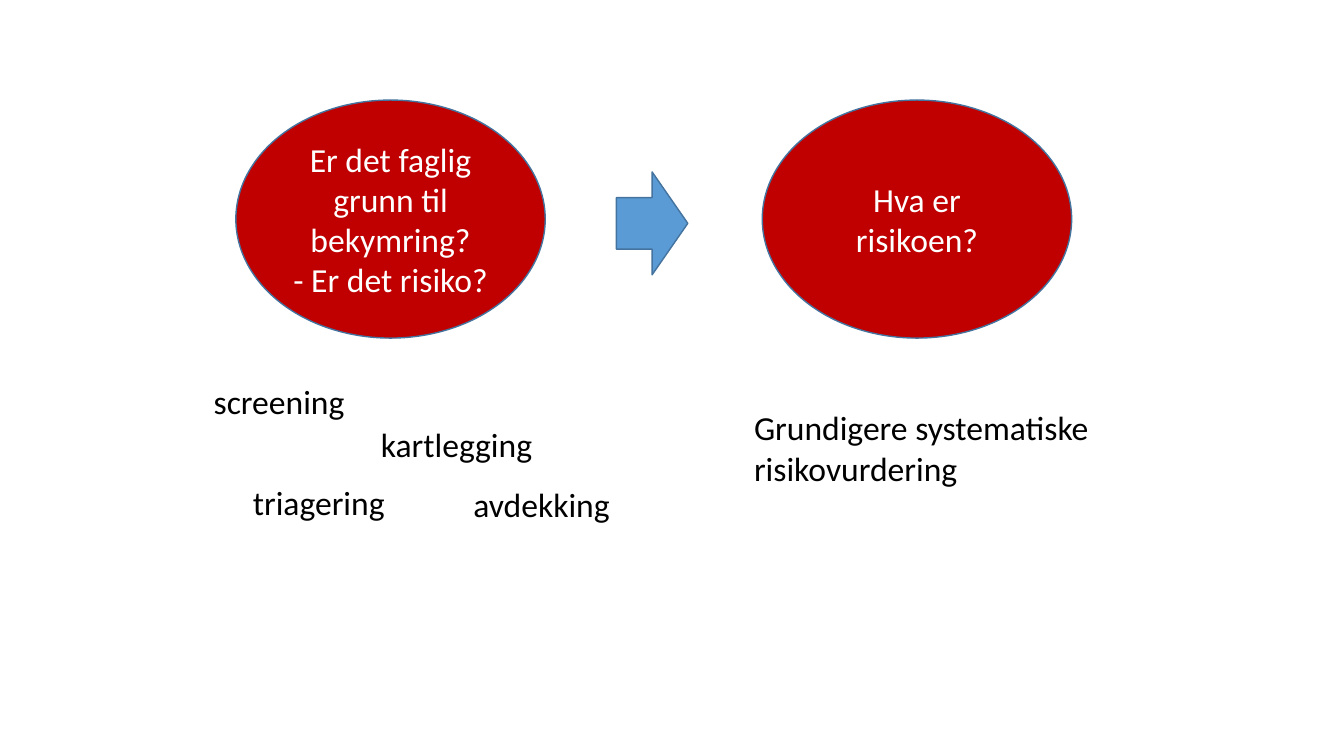
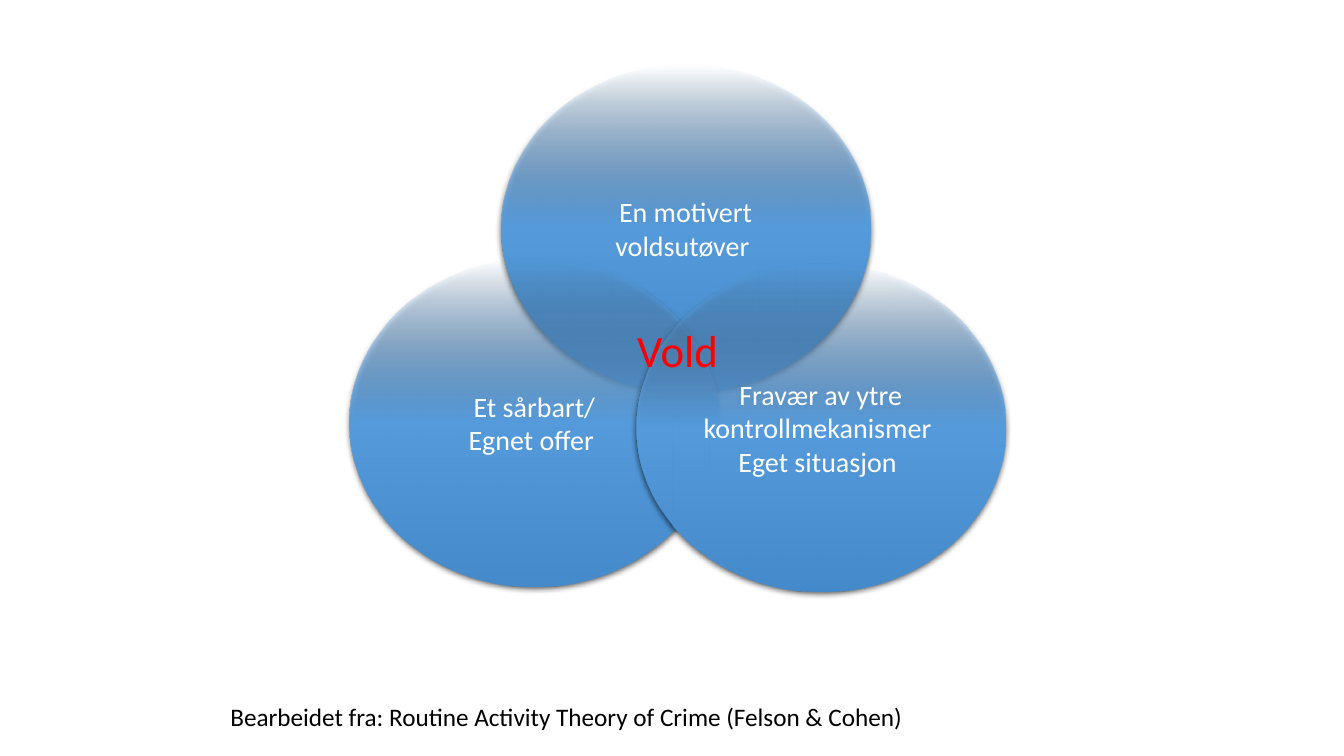
from pptx import Presentation
from pptx.dml.color import RGBColor
from pptx.enum.shapes import MSO_SHAPE
from pptx.enum.text import MSO_ANCHOR, MSO_AUTO_SIZE, PP_ALIGN
from pptx.oxml import parse_xml
from pptx.oxml.ns import nsdecls, qn
from pptx.util import Pt

ELLIPSE, ARROW = MSO_SHAPE.OVAL, MSO_SHAPE.RIGHT_ARROW
CENTER, LEFT = PP_ALIGN.CENTER, PP_ALIGN.LEFT
FONT = "Calibri"
WHITE, BLACK, RED = "FFFFFF", "000000", "FF0000"
DARK_RED, BLUE, OUTLINE = "C00000", "5B9BD5", "43739E"

GRADIENT = f"""<a:gradFill {nsdecls('a')} rotWithShape="1"><a:gsLst>
<a:gs pos="0"><a:srgbClr val="71A6DB"><a:alpha val="0"/></a:srgbClr></a:gs>
<a:gs pos="50000"><a:srgbClr val="559BDB"/></a:gs>
<a:gs pos="100000"><a:srgbClr val="448ACA"/></a:gs>
</a:gsLst><a:lin ang="5400000" scaled="0"/></a:gradFill>"""
SHADOW = f"""<a:outerShdw {nsdecls('a')} blurRad="57150" dist="19050" dir="5400000"
algn="ctr" rotWithShape="0"><a:srgbClr val="000000"><a:alpha val="63000"/></a:srgbClr>
</a:outerShdw>"""


def rgb(value):
    return RGBColor.from_string(value)


def write(shape, lines, size, color, align=LEFT, wrap=True):
    """Fill a shape or text box with one paragraph per line."""
    tf = shape.text_frame
    tf.word_wrap = wrap
    if align == CENTER:
        tf.vertical_anchor = MSO_ANCHOR.MIDDLE
    else:
        tf.auto_size = MSO_AUTO_SIZE.SHAPE_TO_FIT_TEXT
    tf.text = "\n".join(lines)
    for p in tf.paragraphs:
        p.alignment = align
        p.font.name, p.font.size = FONT, Pt(size)
        p.font.color.rgb = rgb(color)


prs = Presentation()
prs.slide_width, prs.slide_height = Pt(960), Pt(540)
blank = prs.slide_layouts[6]

# Slide 1: from concern to risk
s = prs.slides.add_slide(blank)
questions = [
    (ELLIPSE, 168.5, 71.5, 221, 170, DARK_RED,
     ["Er det faglig grunn til bekymring?", "- Er det risiko?"]),
    (ARROW, 440.3, 122.8, 51, 73.5, BLUE, []),
    (ELLIPSE, 544.5, 71.5, 221, 170, DARK_RED, ["Hva er risikoen?"]),
]
for kind, x, y, w, h, fill, lines in questions:
    sp = s.shapes.add_shape(kind, Pt(x), Pt(y), Pt(w), Pt(h))
    sp.shadow.inherit = False
    sp.fill.solid()
    sp.fill.fore_color.rgb = rgb(fill)
    sp.line.color.rgb = rgb(OUTLINE)
    sp.line.width = Pt(1)
    if lines:
        write(sp, lines, 24, WHITE, CENTER)

methods = [
    ("screening", 145.5, 268.5, 109, 36, False),
    ("kartlegging", 265, 299, 129, 36, False),
    ("triagering", 173.5, 341, 115, 36, False),
    ("avdekking", 331, 342, 113, 36, False),
    ("Grundigere systematiske risikovurdering", 531.5, 287.3, 300, 65.5, True),
]
for text, x, y, w, h, wrap in methods:
    box = s.shapes.add_textbox(Pt(x), Pt(y), Pt(w), Pt(h))
    write(box, [text], 24, BLACK, wrap=wrap)

# Slide 2: three overlapping conditions for violence
s = prs.slides.add_slide(blank)
conditions = [
    (358, 46, ["En motivert voldsutøver "]),
    (250, 185, ["Et sårbart/", "Egnet offer "]),
    (454.5, 188.5, ["Fravær av ytre kontrollmekanismer ", "Eget situasjon "]),
]
for x, y, lines in conditions:
    sp = s.shapes.add_shape(ELLIPSE, Pt(x), Pt(y), Pt(263.5), Pt(234))
    sp.line.fill.background()
    sp.shadow.inherit = False
    props = sp.element.spPr
    props.find(qn("a:prstGeom")).addnext(parse_xml(GRADIENT))
    props.find(qn("a:effectLst")).append(parse_xml(SHADOW))
    write(sp, lines, 20, WHITE, CENTER)

box = s.shapes.add_textbox(Pt(448), Pt(227), Pt(95), Pt(46))
write(box, ["Vold"], 32, RED)
box = s.shapes.add_textbox(Pt(157.5), Pt(497.5), Pt(500), Pt(29))
write(box, ["Bearbeidet fra: Routine Activity Theory of Crime (Felson & Cohen)"],
      18, BLACK, wrap=False)

prs.save("out.pptx")
